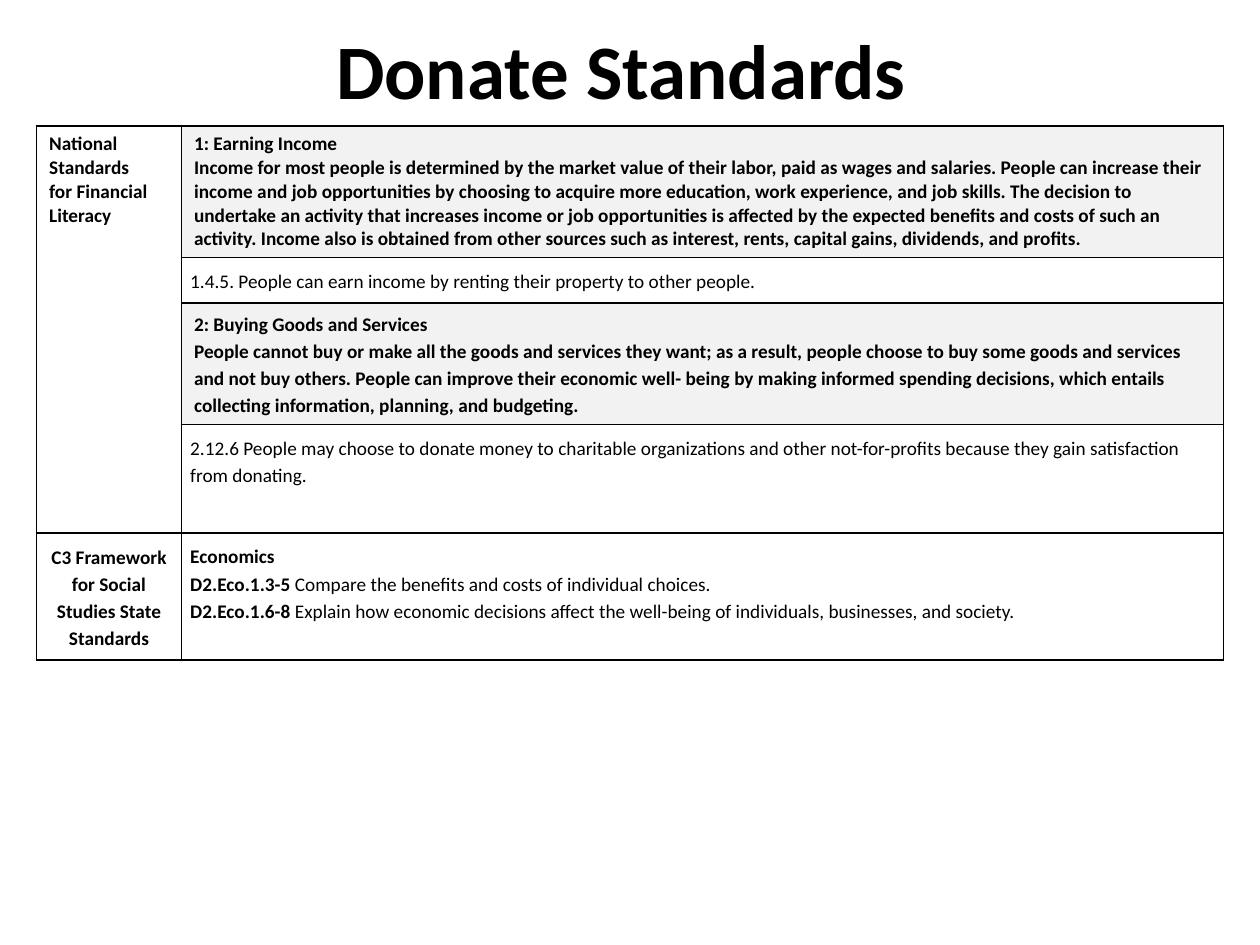
from lxml.etree import SubElement
from pptx import Presentation
from pptx.dml.color import RGBColor
from pptx.enum.text import MSO_ANCHOR, PP_ALIGN
from pptx.oxml.ns import qn
from pptx.util import Inches, Pt

BLACK = RGBColor(0x00, 0x00, 0x00)
WHITE = RGBColor(0xFF, 0xFF, 0xFF)
LIGHT_GRAY = RGBColor(0xF2, 0xF2, 0xF2)
FONT_NAME = "Calibri"

COLUMN_WIDTHS = (1.15, 8.27)
ROW_HEIGHTS = (1.04, 0.36, 0.96, 0.86, 1.01)

PLAIN = {"fill": WHITE, "spacing": 1.15, "inset": 0.07}
CELLS = [
    (0, 0, {"fill": WHITE}, [
        [("National Standards", True)],
        [("for Financial Literacy", True)],
    ]),
    (0, 1, {"fill": LIGHT_GRAY}, [
        [("1: Earning Income", True)],
        [("Income for most people is determined by the market value of their labor, "
          "paid as wages and salaries. People can increase their income and job "
          "opportunities by choosing to acquire more education, work experience, and "
          "job skills. The decision to undertake an activity that increases income or "
          "job opportunities is affected by the expected benefits and costs of such an "
          "activity. Income also is obtained from other sources such as interest, "
          "rents, capital gains, dividends, and profits.", True)],
    ]),
    (1, 1, PLAIN, [
        [("1.4.5. People can earn income by renting their property to other people.", False)],
    ]),
    (2, 1, {"fill": LIGHT_GRAY, "spacing": 1.15}, [
        [("2: Buying Goods and Services", True)],
        [("People cannot buy or make all the goods and services they want; as a result, "
          "people choose to buy some goods and services and not buy others. People can "
          "improve their economic well- being by making informed spending decisions, "
          "which entails collecting information, planning, and budgeting.", True)],
    ]),
    (3, 1, PLAIN, [
        [("2.12.6 People may choose to donate money to charitable organizations and "
          "other not-for-profits because they gain satisfaction from donating.", False)],
    ]),
    (4, 0, PLAIN | {"align": PP_ALIGN.CENTER, "anchor": MSO_ANCHOR.MIDDLE}, [
        [("C3 Framework for Social Studies State Standards", True)],
    ]),
    (4, 1, PLAIN, [
        [("Economics", True)],
        [("D2.Eco.1.3-5", True),
         (" Compare the benefits and costs of individual choices.", False)],
        [("D2.Eco.1.6-8", True),
         (" Explain how economic decisions affect the well-being of individuals, "
          "businesses, and society.", False)],
    ]),
]


def add_run(paragraph, text, size, bold):
    """Add a run in the slide's font."""
    run = paragraph.add_run()
    run.text = text
    run.font.color.rgb = BLACK
    values = {"name": FONT_NAME, "size": Pt(size), "bold": bold}
    for name, value in values.items():
        setattr(run.font, name, value)


def place_title(slide, left, top, width, height):
    """Place and format the title in the given box."""
    title = slide.shapes.title
    box = {"left": left, "top": top, "width": width, "height": height}
    for name, value in box.items():
        setattr(title, name, Inches(value))
    title.text_frame.vertical_anchor = MSO_ANCHOR.MIDDLE
    paragraph = title.text_frame.paragraphs[0]
    paragraph.alignment = PP_ALIGN.CENTER
    add_run(paragraph, "Donate Standards ", 44, True)


def draw_borders(cell):
    """Give a cell a black one-point line on every side."""
    properties = cell._tc.get_or_add_tcPr()
    for side in ("a:lnL", "a:lnR", "a:lnT", "a:lnB"):
        line = SubElement(properties, qn(side), w=str(Pt(1)))
        fill = SubElement(line, qn("a:solidFill"))
        SubElement(fill, qn("a:srgbClr"), val=str(BLACK))


def fill_cell(cell, style, paragraphs):
    """Write the paragraphs into a cell and apply its style."""
    cell.vertical_anchor = style.get("anchor", MSO_ANCHOR.TOP)
    if "inset" in style:
        for side in ("left", "right", "top", "bottom"):
            setattr(cell, f"margin_{side}", Inches(style["inset"]))
    for index, runs in enumerate(paragraphs):
        frame = cell.text_frame
        paragraph = frame.add_paragraph() if index else frame.paragraphs[0]
        paragraph.alignment = style.get("align", PP_ALIGN.LEFT)
        paragraph.line_spacing = style.get("spacing", 1.0)
        for text, bold in runs:
            add_run(paragraph, text, 11, bold)
    cell.fill.solid()
    cell.fill.fore_color.rgb = style["fill"]


def place_standards_table(slide, left, top, width, height):
    """Build the standards table in the given box."""
    frame = slide.shapes.add_table(
        len(ROW_HEIGHTS), len(COLUMN_WIDTHS),
        Inches(left), Inches(top), Inches(width), Inches(height))
    table = frame.table
    table.first_row = False
    table.horz_banding = False
    for column, column_width in zip(table.columns, COLUMN_WIDTHS):
        column.width = Inches(column_width)
    for row, row_height in zip(table.rows, ROW_HEIGHTS):
        row.height = Inches(row_height)
    table.cell(0, 0).merge(table.cell(3, 0))
    for cell in table.iter_cells():
        draw_borders(cell)
    for row, column, style, paragraphs in CELLS:
        fill_cell(table.cell(row, column), style, paragraphs)


def main():
    """Build and save the slide."""
    presentation = Presentation()
    presentation.slide_width = Inches(10)
    presentation.slide_height = Inches(7.5)
    slide = presentation.slides.add_slide(presentation.slide_layouts[5])
    place_title(slide, 0, -0.08, 10, 1.25)
    place_standards_table(slide, 0.29, 1, sum(COLUMN_WIDTHS), sum(ROW_HEIGHTS))
    presentation.save("out.pptx")


if __name__ == "__main__":
    main()
